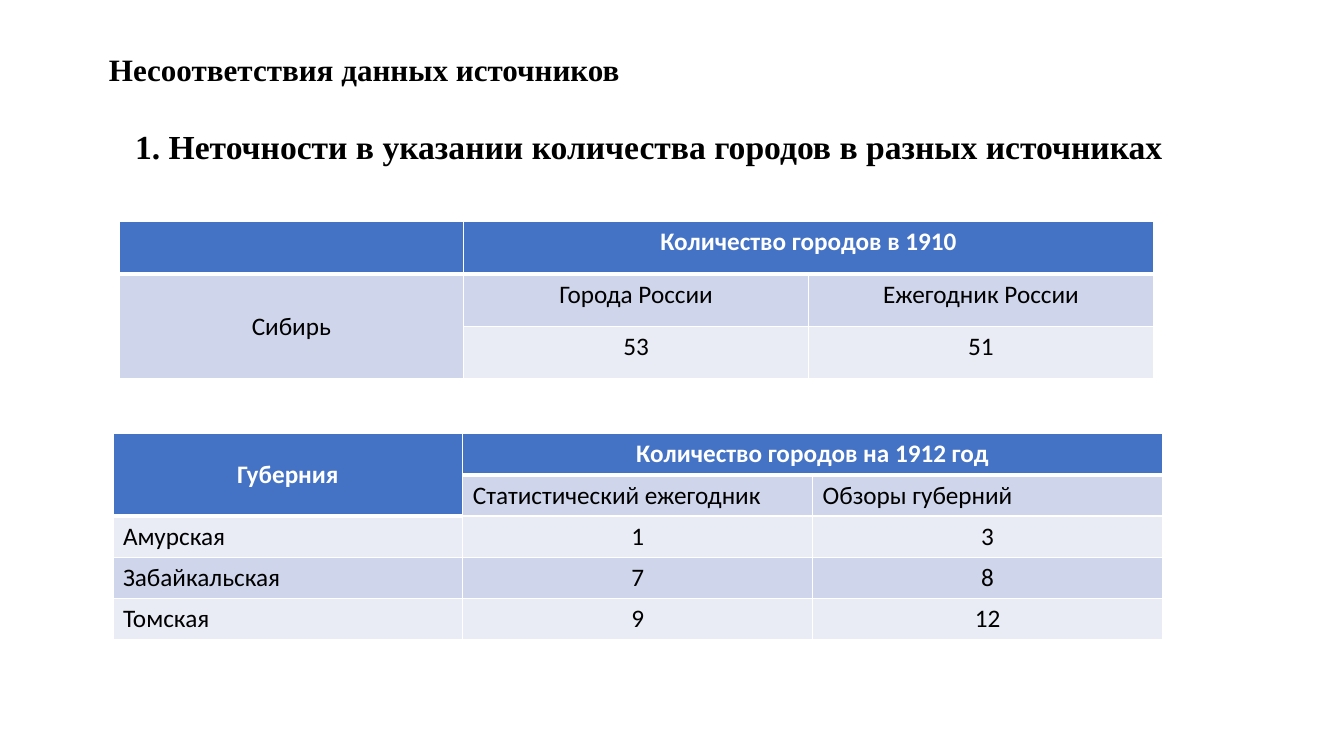
from lxml.etree import SubElement
from pptx import Presentation
from pptx.dml.color import RGBColor
from pptx.enum.text import MSO_ANCHOR as Anchor, MSO_AUTO_SIZE as AutoSize, PP_ALIGN as Align
from pptx.oxml.ns import qn
from pptx.util import Inches, Pt


def color(value):
    """Turn a hex string into a colour."""
    return RGBColor.from_string(value)


def apply(target, values):
    """Set every attribute named in a dict."""
    for name, value in values.items():
        setattr(target, name, value)


class SlideBuilder:
    """Holds the style and the current slide."""

    HEADING_FONT = "Times New Roman"
    TABLE_FONT = "Calibri"
    HEADER = "4472C4"
    BANDS = ("E9EBF5", "CFD5EA")
    WHITE = "FFFFFF"
    BLACK = "000000"

    def __init__(self, presentation):
        """Add a slide with a title and a body."""
        self.slide = presentation.slides.add_slide(presentation.slide_layouts[1])

    def format_text(self, paragraph, text, font, size, bold, text_color, **layout):
        """Write one formatted run into a paragraph."""
        run = paragraph.add_run()
        run.text = text
        apply(run.font, {"name": font, "size": Pt(size), "bold": bold})
        run.font.color.rgb = color(text_color)
        apply(paragraph, layout)

    def heading(self, index, text, box, size, spacing):
        """Fill and place a heading placeholder."""
        shape = self.slide.placeholders[index]
        apply(shape, dict(zip(("left", "top", "width", "height"), map(Inches, box))))
        apply(shape.text_frame, {"word_wrap": True, "auto_size": AutoSize.NONE,
                                 "vertical_anchor": Anchor.MIDDLE})
        paragraph = shape.text_frame.paragraphs[0]
        self.format_text(paragraph, text, self.HEADING_FONT, size, True, self.BLACK,
                         alignment=Align.LEFT, line_spacing=spacing, space_before=Pt(0))
        properties = paragraph._p.get_or_add_pPr()
        properties.set("marL", "0")
        properties.set("indent", "0")
        SubElement(properties, qn("a:buNone"))

    def borders(self, cell, **widths):
        """Draw white cell borders of the given widths."""
        properties = cell._tc.get_or_add_tcPr()
        for side, width in widths.items():
            line = SubElement(properties, qn(f"a:ln{side}"), w=str(Pt(width)))
            fill = SubElement(line, qn("a:solidFill"))
            SubElement(fill, qn("a:srgbClr"), val=self.WHITE)

    def table(self, rows, origin, column_width, row_height, header_depths, merges, left, middle):
        """Add a banded table with merged cells."""
        columns = len(header_depths)
        size = (column_width * columns, row_height * len(rows))
        table = self.slide.shapes.add_table(len(rows), columns, *map(Inches, origin + size)).table
        for column in table.columns:
            column.width = Inches(column_width)
        for row in table.rows:
            row.height = Inches(row_height)
        for start, end in merges:
            table.cell(*start).merge(table.cell(*end))
        for row, texts in enumerate(rows):
            for column, text in enumerate(texts):
                cell = table.cell(row, column)
                depth = header_depths[column]
                header = row < depth
                self.borders(cell, L=1, R=1, T=3 if row == depth else 1,
                             B=3 if row == depth - 1 else 1)
                cell.fill.solid()
                cell.fill.fore_color.rgb = color(self.HEADER if header else self.BANDS[row % 2])
                place = (row, column)
                cell.vertical_anchor = Anchor.MIDDLE if place in middle else Anchor.TOP
                if text:
                    self.format_text(cell.text_frame.paragraphs[0], text, self.TABLE_FONT, 18, header,
                                     self.WHITE if header else self.BLACK,
                                     alignment=Align.LEFT if place in left else Align.CENTER)


def main():
    """Build the slide and save it."""
    presentation = Presentation()
    apply(presentation, {"slide_width": Inches(13.33), "slide_height": Inches(7.5)})
    builder = SlideBuilder(presentation)
    builder.heading(0, "Несоответствия данных источников", (0.98, 0.52, 10.68, 0.4), 22.2, 0.8)
    builder.heading(1, "1. Неточности в указании количества городов в разных источниках",
                    (1.24, 1.06, 10.66, 0.83), 24, 0.9)
    provinces = [("Губерния", "Количество городов на 1912 год", ""),
                 ("", "Статистический ежегодник", "Обзоры губерний"),
                 ("Амурская", "1", "3"),
                 ("Забайкальская", "7", "8"),
                 ("Томская", "9", "12")]
    builder.table(provinces, (1.12, 4.3), 3.47, 0.41, (2, 1, 1),
                  merges=[((0, 0), (1, 0)), ((0, 1), (0, 2))],
                  left={(1, 1), (1, 2), (2, 0), (3, 0), (4, 0)},
                  middle={(0, 0), (0, 1), (1, 1), (1, 2)})
    siberia = [("", "Количество городов в 1910", ""),
               ("Сибирь", "Города России", "Ежегодник России"),
               ("", "53", "51")]
    builder.table(siberia, (1.18, 2.2), 3.42, 0.52, (1, 1, 1),
                  merges=[((0, 1), (0, 2)), ((1, 0), (2, 0))],
                  left=set(), middle={(1, 0)})
    presentation.save("out.pptx")


if __name__ == "__main__":
    main()
